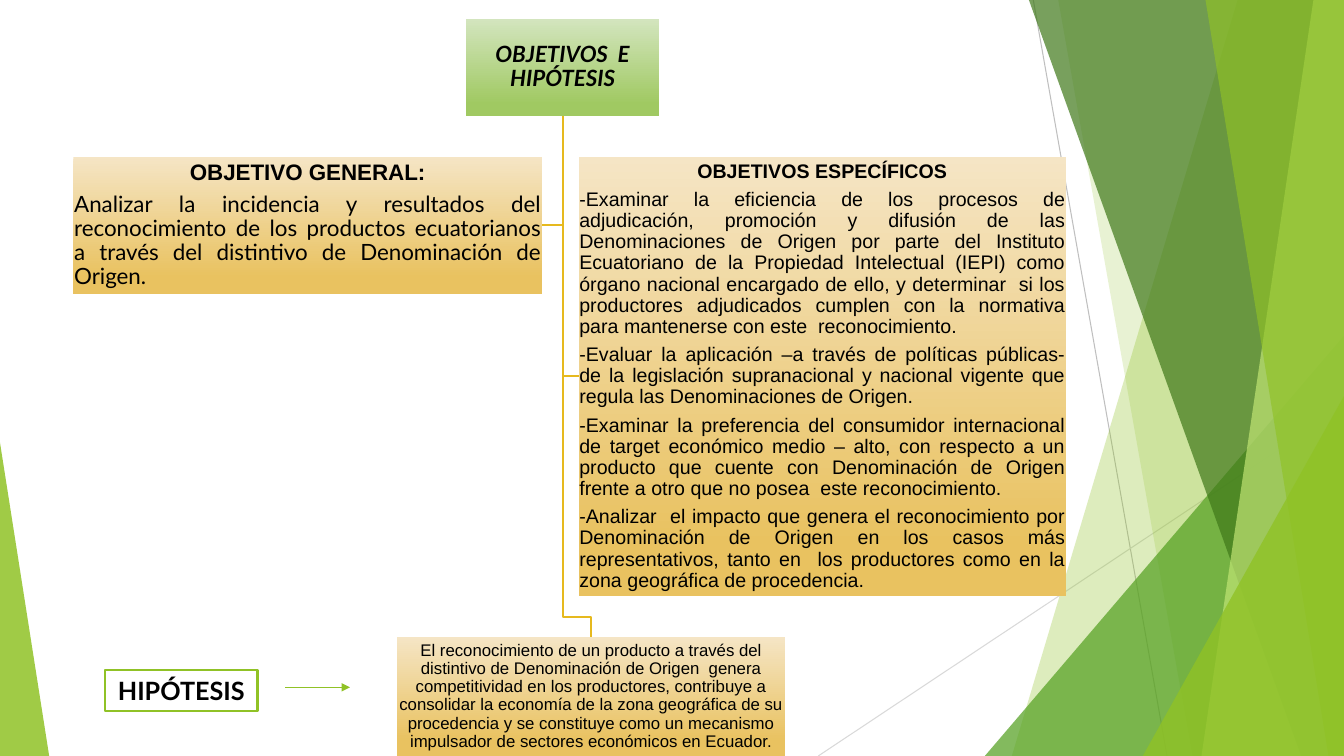
from lxml.etree import SubElement
from pptx import Presentation
from pptx.dml.color import RGBColor
from pptx.enum.shapes import MSO_CONNECTOR as Link, MSO_SHAPE as Preset
from pptx.enum.text import MSO_ANCHOR as Anchor, MSO_AUTO_SIZE as Fit, PP_ALIGN as Align
from pptx.oxml.ns import qn
from pptx.util import Cm, Pt

WIDTH, HEIGHT = 33.87, 19.05
COLORS = {
    "lime": "90C226", "leaf": "54A021", "forest": "3F7819", "pale": "C0E474",
    "grey": "BFBFBF", "light_grey": "D9D9D9", "gold": "E6B91E",
    "green_top": "D3E5BE", "green_bottom": "A0C962",
    "sand_top": "F5E5C5", "sand_bottom": "E9C260",
    "white": "FFFFFF", "black": "000000",
}
BOXES = {
    "heading": (11.74, 0.48, 4.88, 2.44),
    "general": (1.85, 3.95, 11.81, 3.45),
    "specific": (14.58, 3.95, 12.29, 11.07),
    "hypothesis": (10.01, 16.05, 9.78, 3),
    "label": (2.65, 16.89, 3.84, 1.02),
}
FRAME = {
    "word_wrap": True, "auto_size": Fit.NONE, "vertical_anchor": Anchor.MIDDLE,
    "margin_left": Cm(0.02), "margin_right": Cm(0.02),
    "margin_top": Cm(0.02), "margin_bottom": Cm(0.02),
}
GENERAL = [
    "OBJETIVO GENERAL:",
    "Analizar la incidencia y resultados del reconocimiento de los productos ecuatorianos "
    "a través del distintivo de Denominación de Origen.",
]
SPECIFIC = [
    "OBJETIVOS ESPECÍFICOS",
    "-Examinar la eficiencia de los procesos de adjudicación, promoción y difusión de las "
    "Denominaciones de Origen por parte del Instituto Ecuatoriano de la Propiedad Intelectual "
    "(IEPI) como órgano nacional encargado de ello, y determinar  si los productores "
    "adjudicados cumplen con la normativa para mantenerse con este  reconocimiento.",
    "-Evaluar la aplicación –a través de políticas públicas- de la legislación supranacional "
    "y nacional vigente que regula las Denominaciones de Origen.",
    "-Examinar la preferencia del consumidor internacional de target económico medio – alto, "
    "con respecto a un producto que cuente con Denominación de Origen frente a otro que no "
    "posea  este reconocimiento.",
    "-Analizar  el impacto que genera el reconocimiento por Denominación de Origen en los "
    "casos más representativos, tanto en  los productores como en la zona geográfica de "
    "procedencia.",
]
HYPOTHESIS = (
    "El reconocimiento de un producto a través del distintivo de Denominación de Origen  "
    "genera competitividad en los productores, contribuye a consolidar la economía de la "
    "zona geográfica de su procedencia y se constituye como un mecanismo impulsador de "
    "sectores económicos en Ecuador."
)


def rgb(name):
    """Return a palette colour."""
    return RGBColor.from_string(COLORS[name])


def apply(target, values):
    """Set every format value on the target."""
    for key, value in values.items():
        setattr(target, key, value)


def place(part, box):
    """Move a part to a box given in centimetres."""
    apply(part, dict(zip(("left", "top", "width", "height"), map(Cm, box))))


def tint(part, color, opacity):
    """Give a part a borderless fill with the opacity in percent."""
    part.shadow.inherit = False
    part.line.fill.background()
    part.fill.solid()
    part.fill.fore_color.rgb = rgb(color)
    shade = part.fill._xPr.find(".//" + qn("a:srgbClr"))
    SubElement(shade, qn("a:alpha"), val=str(opacity * 1000))


def blend(part, family):
    """Fill a part with a vertical two-colour gradient."""
    part.fill.gradient()
    part.fill.gradient_angle = 270
    for stop, end, position in zip(part.fill.gradient_stops, ("top", "bottom"), (0, 0.88)):
        stop.color.rgb = rgb(f"{family}_{end}")
        stop.position = position


def straight(slide, start, end, color, width):
    """Draw a straight line between two points."""
    line = slide.shapes.add_connector(Link.STRAIGHT, *map(Cm, start + end))
    line.line.color.rgb = rgb(color)
    line.line.width = Pt(width)
    SubElement(line._element.spPr, qn("a:effectLst"))
    return line


def outline(slide, points, close):
    """Draw a freeform through the points."""
    corners = [(Cm(x), Cm(y)) for x, y in points]
    builder = slide.shapes.build_freeform(*corners[0])
    builder.add_line_segments(corners[1:], close=close)
    return builder.convert_to_shape()


def band(slide, top_x, bottom_x, color, opacity):
    """Draw a band from a slanted edge to the right side of the slide."""
    points = [(top_x, 0), (WIDTH, 0), (WIDTH, HEIGHT), (bottom_x, HEIGHT)]
    tint(outline(slide, points, True), color, opacity)


def wedge(slide, left, top, width, peak, color, opacity):
    """Draw a right triangle standing on the bottom of the slide."""
    part = slide.shapes.add_shape(
        Preset.ISOSCELES_TRIANGLE, *map(Cm, (left, top, width, HEIGHT - top)))
    part.adjustments[0] = peak
    tint(part, color, opacity)


def backdrop(slide):
    """Draw the facets on both sides of the slide."""
    straight(slide, (26.04, 0), (29.41, HEIGHT), "grey", 0.75)
    straight(slide, (WIDTH, 10.24), (20.62, HEIGHT), "light_grey", 0.75)
    band(slide, 31.19, 25.5, "lime", 30)
    band(slide, 26.67, 30.05, "lime", 20)
    wedge(slide, 24.82, 8.46, WIDTH - 24.82, 1, "leaf", 72)
    band(slide, 25.93, 32.79, "forest", 70)
    band(slide, 33.1, 30.28, "pale", 70)
    band(slide, 30.38, 33.48, "lime", 65)
    wedge(slide, 28.8, 9.98, WIDTH - 28.8, 1, "lime", 80)
    wedge(slide, 0, 11.15, 1.24, 0, "lime", 85)


def branches(slide, heading, general, specific, hypothesis):
    """Join the heading box to the three boxes below it."""
    x, y = heading[0] + heading[2] / 2, heading[1] + heading[3]
    general_y = general[1] + general[3] / 2
    specific_y = specific[1] + specific[3] / 2
    hypothesis_x, turn_y = hypothesis[0] + hypothesis[2] / 2, hypothesis[1] - 0.51
    routes = [
        [(x, specific_y), (specific[0], specific_y)],
        [(x, general_y), (general[0] + general[2], general_y)],
        [(x, turn_y), (hypothesis_x, turn_y), (hypothesis_x, hypothesis[1])],
    ]
    for route in routes:
        branch = outline(slide, [(x, y)] + route, False)
        branch.shadow.inherit = False
        branch.fill.background()
        branch.line.color.rgb = rgb("gold")
        branch.line.width = Pt(1.5)


def write(part, texts, size, fonts, aligns):
    """Write unbulleted paragraphs, the first one with its own format."""
    apply(part.text_frame, FRAME)
    part.text_frame.text = "\n".join(texts)
    for number, paragraph in enumerate(part.text_frame.paragraphs):
        later = min(number, 1)
        apply(paragraph, {"alignment": aligns[later], "line_spacing": 0.9,
                          "space_before": Pt(0), "space_after": Pt(size * 0.35)})
        apply(paragraph.font, {"name": fonts[later], "size": Pt(size),
                               "bold": len(texts) > 1 and not later})
        paragraph.font.color.rgb = rgb("black")
        properties = paragraph._p.get_or_add_pPr()
        properties.set("marL", "0")
        properties.set("indent", "0")
        properties.insert_element_before(
            properties.makeelement(qn("a:buNone")), "a:tabLst", "a:defRPr", "a:extLst")


def panel(slide, part, box, family, texts, size, fonts, aligns=(Align.CENTER, Align.JUSTIFY)):
    """Place a gradient panel in front and fill in its text."""
    slide.shapes._spTree.append(part._element)
    place(part, box)
    blend(part, family)
    write(part, texts, size, fonts, aligns)


def hypothesis_label(slide, box):
    """Draw the framed label and the arrow to its right."""
    left, top, width, height = box
    label = slide.shapes.add_shape(Preset.RECTANGLE, *map(Cm, box))
    label.shadow.inherit = False
    label.fill.solid()
    label.fill.fore_color.rgb = rgb("white")
    label.line.color.rgb = rgb("lime")
    label.line.width = Pt(1.5)
    apply(label.text_frame, {"text": "HIPÓTESIS", "word_wrap": False})
    caption = label.text_frame.paragraphs[0]
    caption.alignment = Align.CENTER
    apply(caption.font, {"name": "Lato", "size": Pt(18), "bold": True})
    caption.font.color.rgb = rgb("black")
    start, y = left + width + 0.7, top + 0.43
    arrow = straight(slide, (start, y), (start + 1.63, y), "lime", 1)
    SubElement(arrow.line._get_or_add_ln(), qn("a:tailEnd"), type="triangle")


def main():
    """Build and save the slide."""
    deck = Presentation()
    apply(deck, {"slide_width": Cm(WIDTH), "slide_height": Cm(HEIGHT)})
    slide = deck.slides.add_slide(deck.slide_layouts[3])
    heading, general, specific = list(slide.placeholders)[:3]
    backdrop(slide)
    branches(slide, *(BOXES[key] for key in ("heading", "general", "specific", "hypothesis")))
    panel(slide, heading, BOXES["heading"], "green", ["OBJETIVOS  E HIPÓTESIS"], 16, ["Lato"])
    apply(heading.text_frame.paragraphs[0].font, {"bold": True, "italic": True})
    hypothesis = slide.shapes.add_textbox(*map(Cm, BOXES["hypothesis"]))
    panel(slide, hypothesis, BOXES["hypothesis"], "sand", [HYPOTHESIS], 12, ["Arial"])
    panel(slide, general, BOXES["general"], "sand", GENERAL, 16, ["Arial", "Lato"])
    panel(slide, specific, BOXES["specific"], "sand", SPECIFIC, 14, ["Arial", "Arial"])
    hypothesis_label(slide, BOXES["label"])
    for spare in list(slide.placeholders)[3:]:
        spare._element.getparent().remove(spare._element)
    deck.save("out.pptx")


if __name__ == "__main__":
    main()
